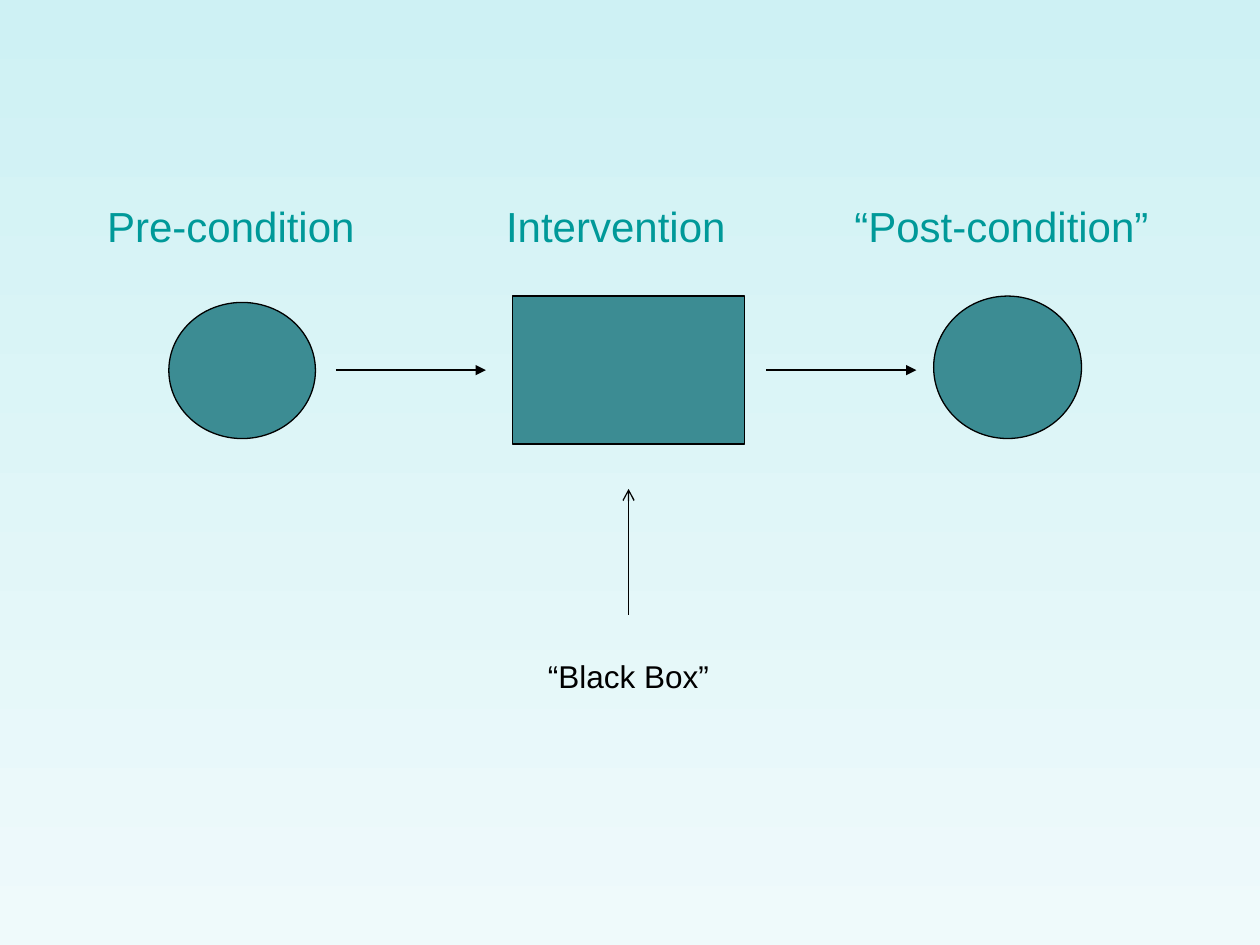
import pptx
import pptx.util
from lxml import etree
from pptx.dml.color import RGBColor
from pptx.enum.shapes import MSO_CONNECTOR, MSO_SHAPE
from pptx.enum.text import MSO_ANCHOR, MSO_AUTO_SIZE, PP_ALIGN
from pptx.oxml.ns import qn

Pt = pptx.util.Pt

SKY = RGBColor(0xCE, 0xF1, 0xF4)
MIST = RGBColor(0xEF, 0xFA, 0xFB)
HEADING = RGBColor(0x00, 0x99, 0x99)
TEAL = RGBColor(0x3C, 0x8C, 0x93)
BLACK = RGBColor(0, 0, 0)
FONT = "Arial"
LINE_WIDTH = 0.75

STAGES = ["Pre-condition", "Intervention", "“Post-condition”"]
HEADING_STOPS = [228, 427]
NOTE = "“Black Box”"

# Preset, left, top, width, height
STAGE_SHAPES = [
    (MSO_SHAPE.OVAL, 96.5, 172.8, 83.8, 77.8),
    (MSO_SHAPE.RECTANGLE, 292.8, 169.2, 132.7, 84.5),
    (MSO_SHAPE.OVAL, 533.5, 169.2, 84.5, 81.4),
]
# Start x, start y, end x, end y, arrowhead
ARROWS = [
    (192, 211.5, 277.7, 211.5, "triangle"),
    (438, 211.5, 523.7, 211.5, "triangle"),
    (359.2, 351.4, 359.2, 279.4, "arrow"),
]


def style_text(paragraph, size, color):
    paragraph.alignment = PP_ALIGN.LEFT
    paragraph.font.name = FONT
    paragraph.font.size = Pt(size)
    paragraph.font.color.rgb = color


def add_headings(slide):
    """Set the stage names in the title, aligned with tab stops."""
    title = slide.shapes.title
    title.left, title.top, title.width, title.height = map(Pt, (54, 66, 612, 126))
    frame = title.text_frame
    frame.text = "\t".join(STAGES)
    frame.vertical_anchor = MSO_ANCHOR.MIDDLE
    frame.auto_size = MSO_AUTO_SIZE.NONE
    frame.margin_right = 0
    paragraph = frame.paragraphs[0]
    properties = paragraph._p.get_or_add_pPr()
    tabs = etree.SubElement(properties, qn("a:tabLst"))
    for stop in HEADING_STOPS:
        etree.SubElement(tabs, qn("a:tab"), pos=str(Pt(stop)), algn="l")
    style_text(paragraph, 24, HEADING)


def add_stage(slide, preset, *box):
    stage = slide.shapes.add_shape(preset, *map(Pt, box))
    stage.shadow.inherit = False
    stage.fill.solid()
    stage.fill.fore_color.rgb = TEAL
    stage.line.color.rgb = BLACK
    stage.line.width = Pt(LINE_WIDTH)


def add_arrow(slide, x1, y1, x2, y2, head):
    arrow = slide.shapes.add_connector(
        MSO_CONNECTOR.STRAIGHT, Pt(x1), Pt(y1), Pt(x2), Pt(y2))
    arrow.line.color.rgb = BLACK
    arrow.line.width = Pt(LINE_WIDTH)
    etree.SubElement(arrow.line._get_or_add_ln(), qn("a:tailEnd"), type=head)
    etree.SubElement(arrow._element.spPr, qn("a:effectLst"))


def add_note(slide):
    note = slide.shapes.add_textbox(Pt(306), Pt(372.2), Pt(175), Pt(28.8))
    frame = note.text_frame
    frame.word_wrap = True
    frame.text = NOTE
    style_text(frame.paragraphs[0], 18, BLACK)


def main():
    deck = pptx.Presentation()
    deck.slide_width, deck.slide_height = Pt(720), Pt(540)
    slide = deck.slides.add_slide(deck.slide_layouts.get_by_name("Title Only"))

    backdrop = slide.background.fill
    backdrop.gradient()
    backdrop.gradient_angle = 270
    for stop, color in zip(backdrop.gradient_stops, (SKY, MIST)):
        stop.color.rgb = color

    add_headings(slide)
    for stage in STAGE_SHAPES:
        add_stage(slide, *stage)
    for arrow in ARROWS:
        add_arrow(slide, *arrow)
    add_note(slide)
    deck.save("out.pptx")


if __name__ == "__main__":
    main()
